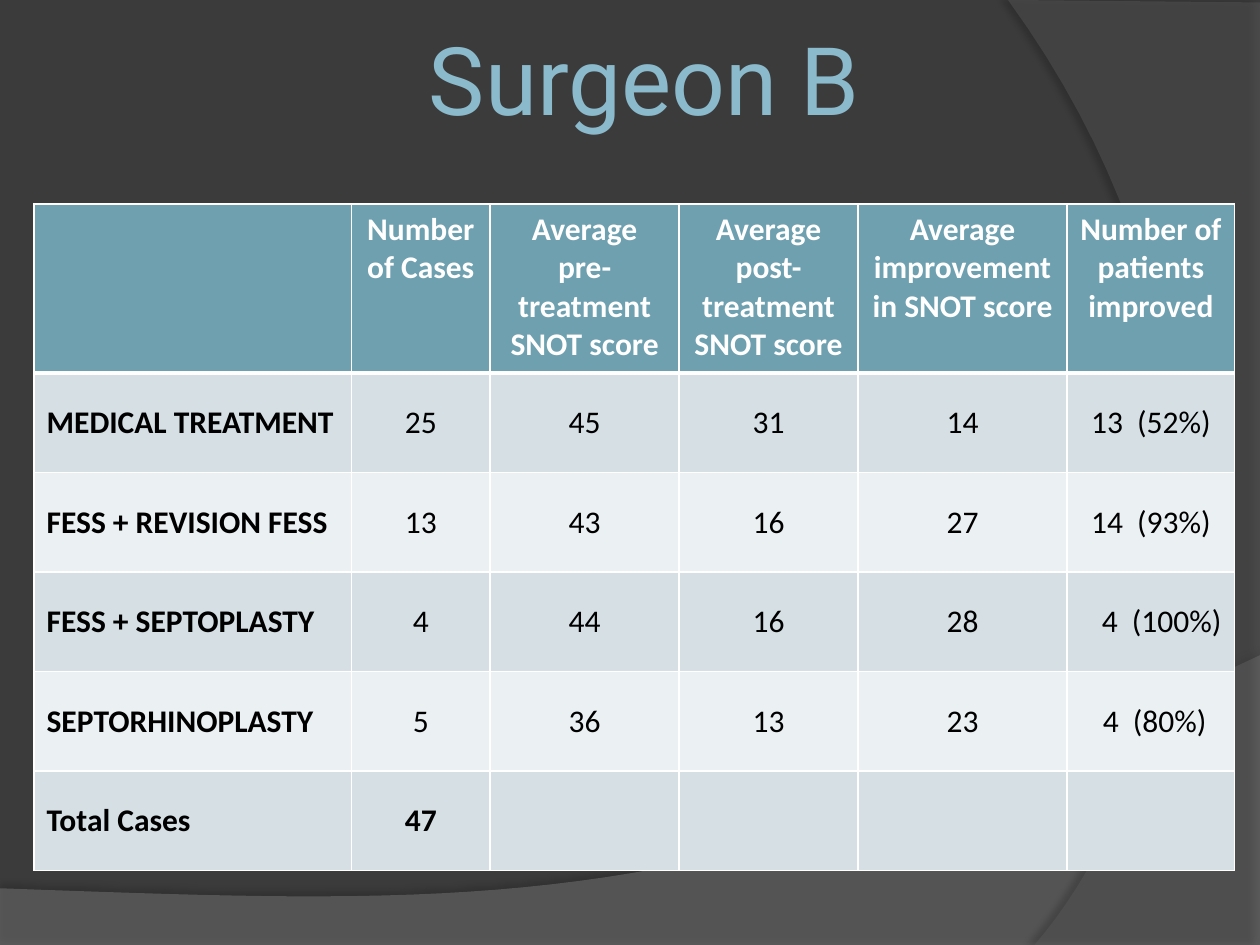
import pptx
import pptx.util
import pptx.dml.color
import pptx.enum.text
import pptx.oxml
import pptx.oxml.ns

Inches = pptx.util.Inches
Pt = pptx.util.Pt
ALIGN = pptx.enum.text.PP_ALIGN
MIDDLE = pptx.enum.text.MSO_ANCHOR.MIDDLE
TOP = pptx.enum.text.MSO_ANCHOR.TOP
NS = pptx.oxml.ns.nsdecls("a")

HEX = {
    "back": "3B3B3B", "wave": "7F7F7F", "arc": "5E5E5E", "shade": "000000",
    "title": "8ABACB", "head": "6EA0B0", "odd": "D5DFE4", "even": "EBF0F2",
    "line": "FFFFFF", "light": "FFFFFF", "dark": "000000",
}
COLS = [2.52, 1.1, 1.5, 1.42, 1.66, 1.33]
ROWS = [1.34] + [0.79] * 5
DATA = [
    ["", "Number of Cases", "Average\npre-treatment SNOT score",
     "Average\npost-treatment SNOT score",
     "Average improvement\nin SNOT score", "Number of patients improved"],
    ["MEDICAL TREATMENT", "25", "45", "31", "14", "13  (52%)"],
    ["FESS + REVISION FESS", "13", "43", "16", "27", "14  (93%)"],
    ["FESS + SEPTOPLASTY", "4", "44", "16", "28", "4  (100%)"],
    ["SEPTORHINOPLASTY", "5", "36", "13", "23", "4  (80%)"],
    ["Total Cases", "47", "", "", "", ""],
]
SHIFT = {(3, 5): 0.17, (4, 5): 0.06}


def tint(name):
    """Return the named colour."""
    return pptx.dml.color.RGBColor.from_string(HEX[name])


def style(para, align, indent, color, **font):
    """Format one paragraph and its font."""
    para.alignment = align
    if indent:
        props = para._p.get_or_add_pPr()
        props.set("marL", str(Inches(indent)))
        props.set("indent", "0")
    for key, value in font.items():
        setattr(para.font, key, value)
    para.font.color.rgb = tint(color)


def curve(ends, count=40):
    """Return points along a cubic curve."""
    points = []
    for step in range(count + 1):
        t = step / count
        parts = ((1 - t) ** 3, 3 * t * (1 - t) ** 2, 3 * t * t * (1 - t), t ** 3)
        points.append(tuple(sum(w * p[axis] for w, p in zip(parts, ends))
                            for axis in (0, 1)))
    return points


def sheet(slide, box, points, color, alpha, shade):
    """Draw a translucent sheet with a soft shadow."""
    left, top = box[:2]
    spots = [(Inches(left + x), Inches(top + y)) for x, y in points]
    build = slide.shapes.build_freeform(*spots[0])
    build.add_line_segments(spots[1:], close=True)
    shape = build.convert_to_shape()
    shape.fill.solid()
    shape.fill.fore_color.rgb = tint(color)
    shape.line.fill.background()
    fill = shape._element.spPr.find(".//" + pptx.oxml.ns.qn("a:srgbClr"))
    fill.append(pptx.oxml.parse_xml(f'<a:alpha {NS} val="{alpha * 1000}"/>'))
    dark, blur, gap, angle = shade
    shape._element.spPr.append(pptx.oxml.parse_xml(
        f'<a:effectLst {NS}><a:outerShdw blurRad="{Pt(blur)}" dist="{Pt(gap)}" '
        f'dir="{angle * 60000}" algn="ctr" rotWithShape="0">'
        f'<a:srgbClr val="{HEX["shade"]}"><a:alpha val="{dark * 1000}"/>'
        '</a:srgbClr></a:outerShdw></a:effectLst>'))


def scene(slide, box):
    """Paint the backdrop and its two curved sheets."""
    left, top, width, height = box
    slide.background.fill.solid()
    slide.background.fill.fore_color.rgb = tint("back")
    wave = [(0, 2.31), (width, 2.31)] + curve(
        [(width, 0), (5.59, 2.09), (3.91, 1.99), (0, 1.85)])
    sheet(slide, (left, top + 5.2), wave, "wave", 45, (35, 4, 3.5, 270))
    arc = [(2, 0.02), (2, height)] + curve(
        [(0.21, height), (1.35, 6.19), (2.18, 3), (0, 0)])
    sheet(slide, (left + 8, top), arc, "arc", 40, (45, 4, 4, 180))


def title(slide, box, text):
    """Place the slide title."""
    frame = slide.shapes.add_textbox(*map(Inches, box)).text_frame
    form = {"word_wrap": True, "vertical_anchor": MIDDLE}
    form.update({f"margin_{side}": Inches(0.05)
                 for side in ("left", "right", "top", "bottom")})
    for key, value in form.items():
        setattr(frame, key, value)
    frame.text = text
    style(frame.paragraphs[0], ALIGN.CENTER, 0.53, "title",
          size=Pt(54), name="Roboto")


def edge(cell, row):
    """Rule the cell, with a thick line below the header."""
    thick = {("B", 0), ("T", 1)}
    for side in "LRTB":
        width = Pt(3 if (side, row) in thick else 1)
        cell._tc.get_or_add_tcPr().append(pptx.oxml.parse_xml(
            f'<a:ln{side} {NS} w="{width}"><a:solidFill>'
            f'<a:srgbClr val="{HEX["line"]}"/></a:solidFill></a:ln{side}>'))


def grid(slide, box):
    """Place the table of results."""
    table = slide.shapes.add_table(len(ROWS), len(COLS), *map(Inches, box)).table
    table.first_row = table.horz_banding = False
    for col, width in zip(table.columns, COLS):
        col.width = Inches(width)
    for line, height in zip(table.rows, ROWS):
        line.height = Inches(height)
    for row, texts in enumerate(DATA):
        head = row == 0
        fill = "head" if head else "odd" if row % 2 else "even"
        for col, text in enumerate(texts):
            cell = table.cell(row, col)
            edge(cell, row)
            cell.fill.solid()
            cell.fill.fore_color.rgb = tint(fill)
            cell.vertical_anchor = TOP if head else MIDDLE
            cell.text = text
            for para in cell.text_frame.paragraphs:
                style(para, ALIGN.CENTER if head or col else ALIGN.LEFT,
                      SHIFT.get((row, col), 0), "light" if head else "dark",
                      size=Pt(18), name="Calibri",
                      bold=head or col == 0 or row == len(DATA) - 1)


def main():
    """Build and save the slide."""
    deck = pptx.Presentation()
    deck.slide_width, deck.slide_height = Inches(10), Inches(7.5)
    slide = deck.slides.add_slide(deck.slide_layouts[6])
    scene(slide, (0, 0, 10, 7.5))
    title(slide, (0.35, 0.21, 9, 0.81), "Surgeon B")
    grid(slide, (0.27, 1.62, sum(COLS), sum(ROWS)))
    deck.save("out.pptx")


if __name__ == "__main__":
    main()
